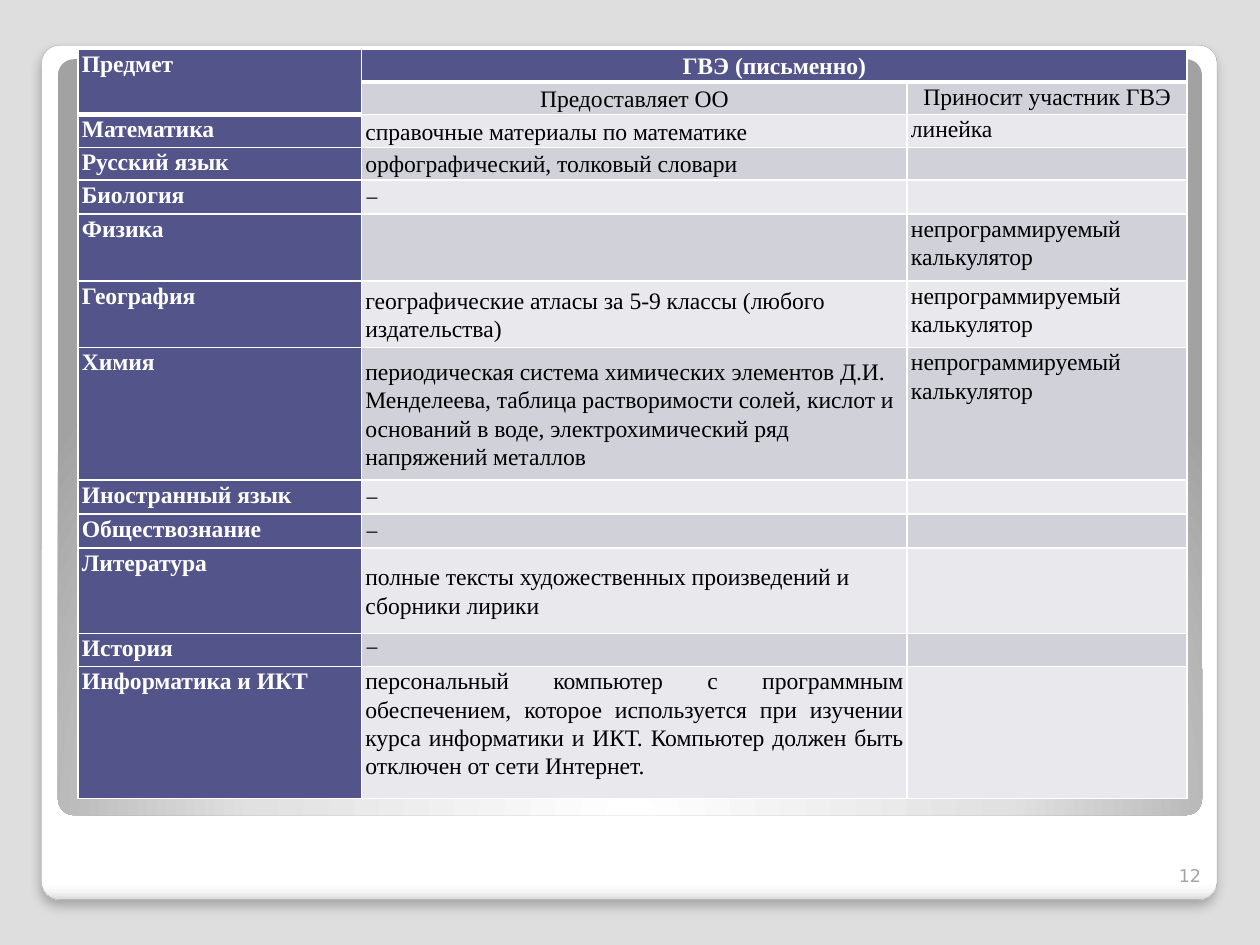
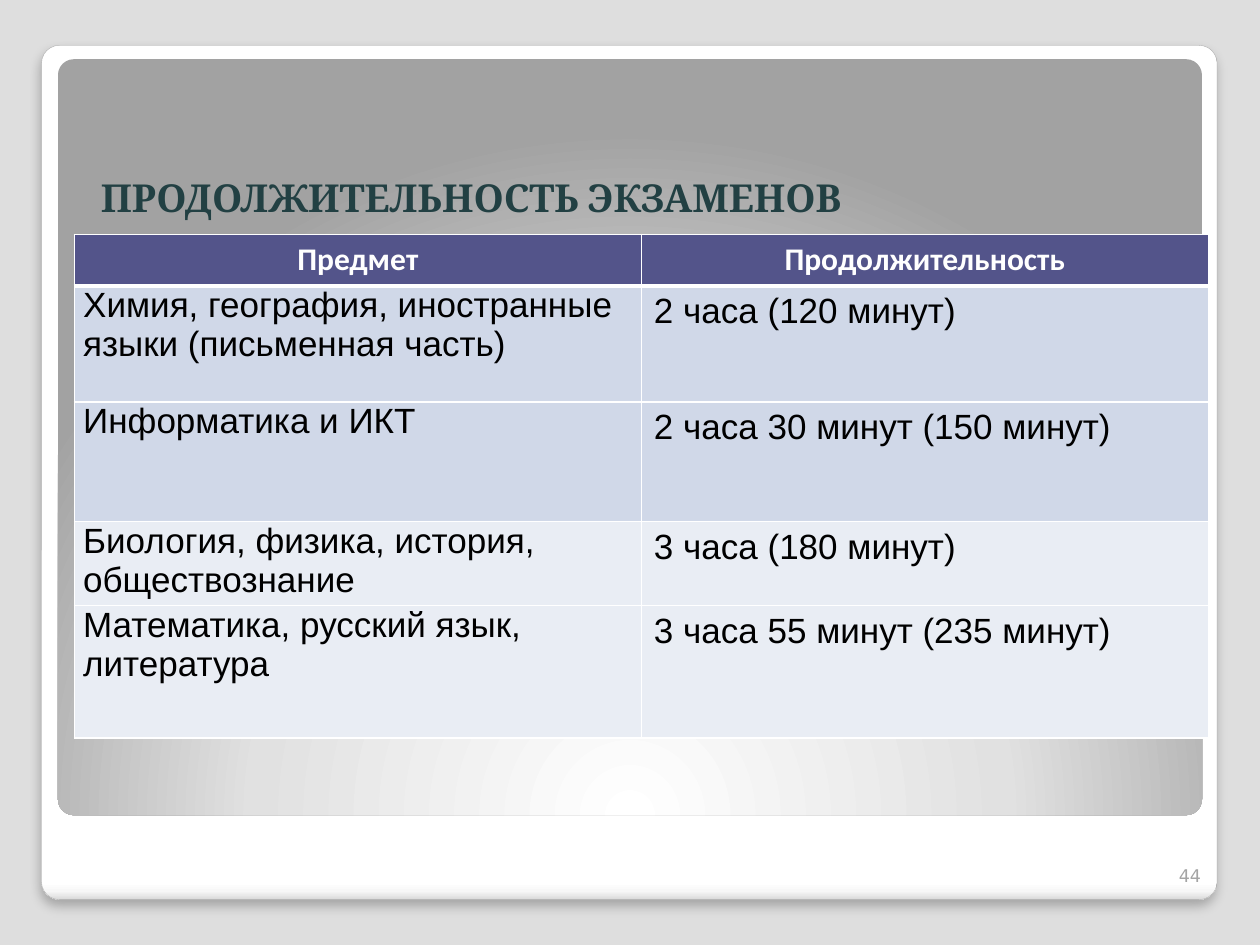
from dataclasses import dataclass
from typing import Optional

from lxml.etree import SubElement
from pptx import Presentation
from pptx.dml.color import RGBColor
from pptx.enum.shapes import MSO_SHAPE as Shape
from pptx.enum.text import MSO_ANCHOR as Anchor, MSO_AUTO_SIZE as AutoSize, PP_ALIGN as Align
from pptx.oxml import parse_xml
from pptx.oxml.ns import nsdecls, qn
from pptx.util import Inches, Pt

BACKDROP = RGBColor(0xDE, 0xDE, 0xDE)
WHITE = RGBColor(0xFF, 0xFF, 0xFF)
BLACK = RGBColor(0, 0, 0)
GREY = RGBColor(0xA4, 0xA4, 0xA4)
TITLE_TEAL = RGBColor(0x22, 0x40, 0x43)
VIOLET = RGBColor(0x53, 0x54, 0x8A)
LILAC = RGBColor(0xD1, 0xD1, 0xDA)
PALE_LILAC = RGBColor(0xE9, 0xE9, 0xED)
BLUE = RGBColor(0xD0, 0xD8, 0xE8)
PALE_BLUE = RGBColor(0xE9, 0xED, 0xF4)

NARROW_INSETS = (0.03, 0)
SUBJECT_INSETS = (0.07, 0)
DEFAULT_INSETS = (0.1, 0.05)
CALCULATOR = "непрограммируемый калькулятор"
DASH = "−"


@dataclass
class Panel:
    box: tuple[float, float, float, float]
    stops: tuple[tuple[int, str], ...]
    direction: str
    raised: bool = False


@dataclass
class CellStyle:
    fill: RGBColor
    size: float
    font: str
    color: RGBColor = BLACK
    bold: bool = False
    align: Align = Align.LEFT
    anchor: Anchor = Anchor.TOP
    insets: tuple[float, float] = DEFAULT_INSETS
    spacing: Optional[float] = None


@dataclass
class SupplyRow:
    subject: str
    height: float
    provided: str = ""
    brought: str = ""
    justified: bool = False


@dataclass
class DurationRow:
    subjects: str
    duration: str
    height: float
    fill: RGBColor


PANELS = (
    Panel((0.33, 0.36, 9.33, 6.78),
          ((0, "FFFFFF"), (98, "FFFFFF"), (99, "F7F7F7"), (100, "DADADA")),
          '<a:lin ang="5400000" scaled="0"/>', raised=True),
    Panel((0.46, 0.47, 9.08, 6),
          ((0, "FFFFFF"), (55, "E1E1E1"), (100, "A2A2A2")),
          '<a:path path="circle"><a:fillToRect l="50000" t="175000" r="50000" b="-75000"/></a:path>'),
)

SUPPLIES = (
    SupplyRow("Математика", 0.26, "справочные материалы по математике", "линейка"),
    SupplyRow("Русский язык", 0.26, "орфографический, толковый словари"),
    SupplyRow("Биология", 0.27, DASH),
    SupplyRow("Физика", 0.53, brought=CALCULATOR),
    SupplyRow("География", 0.53, "географические атласы за 5-9 классы (любого издательства)",
              CALCULATOR),
    SupplyRow("Химия", 1.05,
              "периодическая система химических элементов Д.И. Менделеева, таблица "
              "растворимости солей, кислот и оснований в воде, электрохимический ряд "
              "напряжений металлов", CALCULATOR),
    SupplyRow("Иностранный язык", 0.27, DASH),
    SupplyRow("Обществознание", 0.27, DASH),
    SupplyRow("Литература", 0.68, "полные тексты художественных произведений и сборники лирики"),
    SupplyRow("История", 0.26, DASH, justified=True),
    SupplyRow("Информатика и ИКТ", 1.05,
              "персональный компьютер с программным обеспечением, которое используется при "
              "изучении курса информатики и ИКТ. Компьютер должен быть отключен от сети "
              "Интернет.", justified=True),
)

DURATIONS = (
    DurationRow("Химия, география, иностранные языки (письменная часть)",
                "2 часа (120 минут)", 0.92, BLUE),
    DurationRow("Информатика и ИКТ", "2 часа 30 минут (150 минут)", 0.95, BLUE),
    DurationRow("Биология, физика, история, обществознание",
                "3 часа (180 минут)", 0.62, PALE_BLUE),
    DurationRow("Математика, русский язык, литература",
                "3 часа 55 минут (235 минут)", 1.05, PALE_BLUE),
)


def put_text(tf, text: str, *, size: float, font: str, color: RGBColor, bold: bool = False,
             align: Align = Align.LEFT, spacing: Optional[float] = None) -> None:
    p = tf.paragraphs[0]
    p.alignment = align
    if spacing:
        p.line_spacing = Pt(spacing)
    if not text:
        # An empty cell keeps the small size, so its row does not grow.
        SubElement(p._p, qn("a:endParaRPr"), sz=str(int(size * 100)))
        return
    r = p.add_run()
    r.text = text
    r.font.size, r.font.name, r.font.bold = Pt(size), font, bold
    r.font.color.rgb = color


def add_panel(prs, slide, panel: Panel, order: int) -> None:
    """Draw a panel and move it to the slide master, behind its placeholders."""
    sp = slide.shapes.add_shape(Shape.ROUNDED_RECTANGLE, *map(Inches, panel.box))
    sp.adjustments[0] = 0.021
    sp.shadow.inherit = False
    if panel.raised:
        sp.line.color.rgb = GREY
        sp.line.width = Pt(0.16)
        effects = sp._element.spPr.find(qn("a:effectLst"))
        effects.append(parse_xml(
            f'<a:outerShdw {nsdecls("a")} blurRad="{Pt(6)}" dist="{Pt(4)}" dir="5400000" '
            'algn="t" rotWithShape="0"><a:srgbClr val="000000"><a:alpha val="25000"/>'
            '</a:srgbClr></a:outerShdw>'))
    else:
        sp.line.fill.background()
    stops = "".join(f'<a:gs pos="{pos * 1000}"><a:srgbClr val="{rgb}"/></a:gs>'
                    for pos, rgb in panel.stops)
    sp._element.spPr.find(qn("a:prstGeom")).addnext(parse_xml(
        f'<a:gradFill {nsdecls("a")} rotWithShape="1"><a:gsLst>{stops}</a:gsLst>'
        f'{panel.direction}</a:gradFill>'))
    sp._element.nvSpPr.cNvPr.id = 100 + order
    prs.slide_master.shapes._spTree.insert(2 + order, sp._element)


def add_page_number(slide, number: int) -> None:
    tf = slide.shapes.add_textbox(*map(Inches, (9.13, 6.68, 0.5, 0.4))).text_frame
    tf.word_wrap = True
    tf.vertical_anchor = Anchor.BOTTOM
    put_text(tf, str(number), size=10, font="DejaVu Sans", color=GREY, align=Align.RIGHT)


def set_borders(cell, top: float, bottom: float) -> None:
    tc_pr = cell._tc.get_or_add_tcPr()
    for i, (side, width) in enumerate(zip("LRTB", (1, 1, top, bottom))):
        tc_pr.insert(i, parse_xml(
            f'<a:ln{side} {nsdecls("a")} w="{Pt(width)}"><a:solidFill>'
            f'<a:srgbClr val="{WHITE}"/></a:solidFill></a:ln{side}>'))


def fill_cell(cell, text: str, style: CellStyle) -> None:
    cell.fill.solid()
    cell.fill.fore_color.rgb = style.fill
    cell.vertical_anchor = style.anchor
    side, edge = map(Inches, style.insets)
    cell.margin_left = cell.margin_right = side
    cell.margin_top = cell.margin_bottom = edge
    put_text(cell.text_frame, text, size=style.size, font=style.font, color=style.color,
             bold=style.bold, align=style.align, spacing=style.spacing)


def add_grid(slide, left: float, top: float, widths: tuple[float, ...],
             heights: list[float], header_ends: tuple[int, ...]):
    """Add a ruled table; header_ends gives each column's last header row."""
    table = slide.shapes.add_table(
        len(heights), len(widths),
        *map(Inches, (left, top, sum(widths), sum(heights)))).table
    table.first_row = table.horz_banding = False
    for column, width in zip(table.columns, widths):
        column.width = Inches(width)
    for row, height in zip(table.rows, heights):
        row.height = Inches(height)
    for i in range(len(heights)):
        for j, end in enumerate(header_ends):
            set_borders(table.cell(i, j), top=3 if i == end + 1 else 1,
                        bottom=3 if i <= end else 1)
    return table


def supply_style(fill: RGBColor, **kwargs) -> CellStyle:
    return CellStyle(fill, 13.5, "Times New Roman", insets=NARROW_INSETS, spacing=16.2, **kwargs)


def build_supplies(slide) -> None:
    table = add_grid(slide, 0.62, 0.39, (2.25, 4.33, 2.22),
                     [0.26, 0.26] + [row.height for row in SUPPLIES], (1, 0, 0))
    table.cell(0, 0).merge(table.cell(1, 0))
    table.cell(0, 1).merge(table.cell(0, 2))
    subject = supply_style(VIOLET, color=WHITE, bold=True, align=Align.JUSTIFY)
    fill_cell(table.cell(0, 0), "Предмет", subject)
    fill_cell(table.cell(0, 1), "ГВЭ (письменно)",
              supply_style(VIOLET, color=WHITE, bold=True, align=Align.CENTER,
                           anchor=Anchor.MIDDLE))
    fill_cell(table.cell(1, 1), "Предоставляет ОО",
              supply_style(LILAC, align=Align.CENTER, anchor=Anchor.MIDDLE))
    fill_cell(table.cell(1, 2), "Приносит участник ГВЭ", supply_style(LILAC, align=Align.CENTER))
    for i, row in enumerate(SUPPLIES, start=2):
        band = LILAC if i % 2 else PALE_LILAC
        provided = (supply_style(band, align=Align.JUSTIFY) if row.justified
                    else supply_style(band, anchor=Anchor.MIDDLE))
        fill_cell(table.cell(i, 0), row.subject, subject)
        fill_cell(table.cell(i, 1), row.provided, provided)
        fill_cell(table.cell(i, 2), row.brought, supply_style(band))


def build_durations(slide) -> None:
    title = slide.shapes.title
    title.left, title.top, title.width, title.height = map(Inches, (0.7, 0.94, 9, 0.86))
    tf = title.text_frame
    tf.auto_size = AutoSize.NONE
    tf.vertical_anchor = Anchor.BOTTOM
    put_text(tf, "ПРОДОЛЖИТЕЛЬНОСТЬ ЭКЗАМЕНОВ", size=22, font="Cambria",
             color=TITLE_TEAL, bold=True)
    add_page_number(slide, 44)
    table = add_grid(slide, 0.59, 1.86, (4.5, 4.5),
                     [0.41] + [row.height for row in DURATIONS], (0, 0))
    header = CellStyle(VIOLET, 18, "Calibri", color=WHITE, bold=True, align=Align.CENTER)
    for j, text in enumerate(("Предмет", "Продолжительность")):
        fill_cell(table.cell(0, j), text, header)
    for i, row in enumerate(DURATIONS, start=1):
        fill_cell(table.cell(i, 0), row.subjects,
                  CellStyle(row.fill, 20, "Arial", insets=SUBJECT_INSETS))
        fill_cell(table.cell(i, 1), row.duration, CellStyle(row.fill, 20, "Arial"))


def main() -> None:
    prs = Presentation()
    prs.slide_width, prs.slide_height = Inches(10), Inches(7.5)
    background = prs.slide_master.background.fill
    background.solid()
    background.fore_color.rgb = BACKDROP
    title_only, blank = prs.slide_layouts[5], prs.slide_layouts[6]

    supplies = prs.slides.add_slide(blank)
    for order, panel in enumerate(PANELS):
        add_panel(prs, supplies, panel, order)
    build_supplies(supplies)
    add_page_number(supplies, 12)

    build_durations(prs.slides.add_slide(title_only))
    prs.save("out.pptx")


if __name__ == "__main__":
    main()
